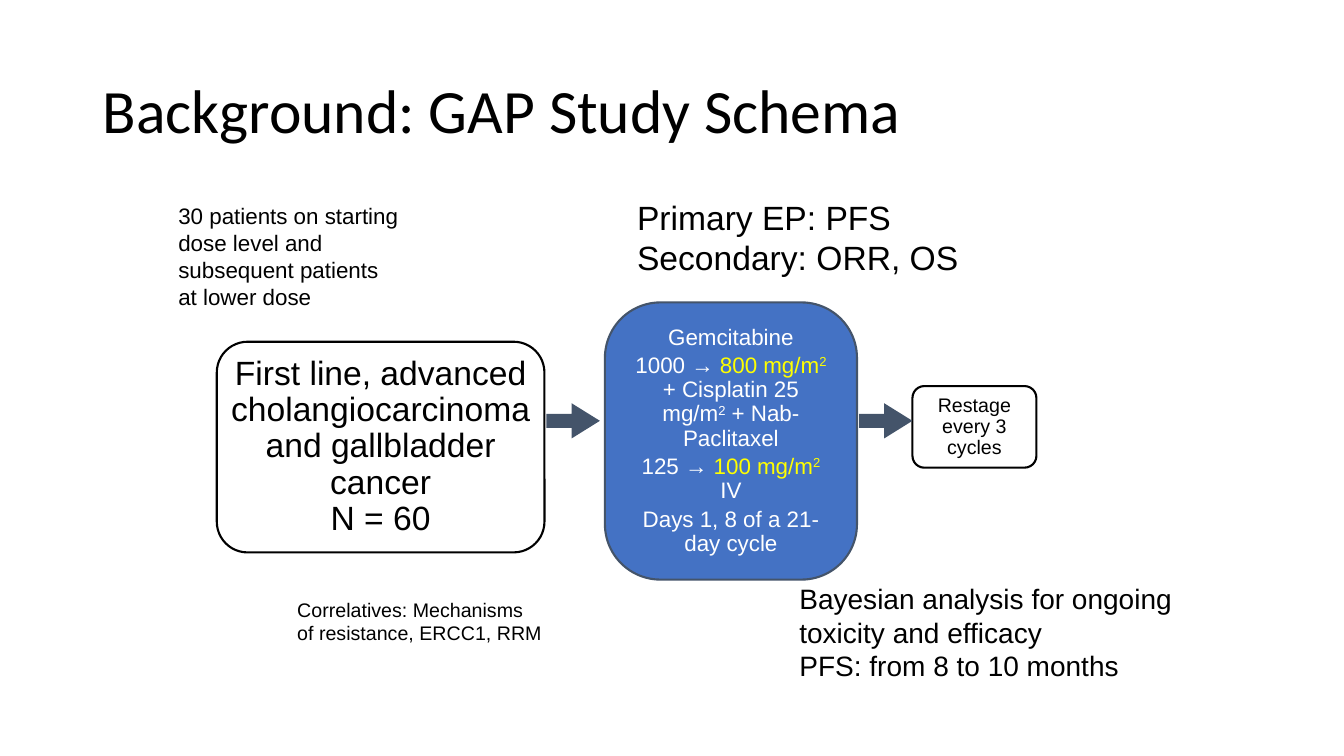
import pptx
import pptx.dml.color
import pptx.enum.shapes
import pptx.enum.text
import pptx.oxml.ns
import pptx.util
import lxml.etree

Inches = pptx.util.Inches
Pt = pptx.util.Pt
RGBColor = pptx.dml.color.RGBColor
Shape = pptx.enum.shapes.MSO_SHAPE
Align = pptx.enum.text.PP_ALIGN
Anchor = pptx.enum.text.MSO_ANCHOR

BLACK = RGBColor(0x00, 0x00, 0x00)
WHITE = RGBColor(0xFF, 0xFF, 0xFF)
YELLOW = RGBColor(0xFF, 0xFF, 0x00)
BLUE = RGBColor(0x44, 0x72, 0xC4)
SLATE = RGBColor(0x44, 0x54, 0x6A)

BREAK = "\n"


def write_text(frame, paragraphs, size, color=BLACK, font="Arial", align=Align.LEFT,
               spacing=1.0, before=0):
    """Each paragraph is a string or a list of (text, color, raised) spans; BREAK ends a line."""
    for index, content in enumerate(paragraphs):
        para = frame.add_paragraph() if index else frame.paragraphs[0]
        para.alignment = align
        para.line_spacing = spacing
        if index and before:
            para.space_before = Pt(before)
        spans = [(content, color, False)] if isinstance(content, str) else content
        for text, span_color, raised in spans:
            if text == BREAK:
                para.add_line_break()
                lxml.etree.SubElement(para._p[-1], pptx.oxml.ns.qn("a:rPr"), sz=str(size * 100))
                continue
            span = para.add_run()
            span.text = text
            span.font.size = Pt(size)
            span.font.name = font
            span.font.color.rgb = span_color
            if raised:
                span.font._element.set("baseline", "30000")


class SchemaPage:
    """Holds the slide and the style of the study schema."""

    outline_width = Pt(1.5)

    def __init__(self, deck):
        self.page = deck.slides.add_slide(deck.slide_layouts[6])

    def shape(self, kind, left, top, width, height, adjustments, fill, line=None):
        item = self.page.shapes.add_shape(
            kind, Inches(left), Inches(top), Inches(width), Inches(height))
        item.shadow.inherit = False
        for index, value in enumerate(adjustments):
            item.adjustments[index] = value
        item.fill.solid()
        item.fill.fore_color.rgb = fill
        if line is None:
            item.line.fill.background()
        else:
            item.line.color.rgb = line
            item.line.width = self.outline_width
        return item

    def step(self, left, top, width, height, paragraphs, size, fill=WHITE, line=BLACK,
             color=BLACK, corner=0.146, margins=(0, 0.05), before=0):
        item = self.shape(Shape.ROUNDED_RECTANGLE, left, top, width, height,
                          [corner], fill, line)
        frame = item.text_frame
        frame.word_wrap = True
        frame.vertical_anchor = Anchor.MIDDLE
        frame.margin_left = frame.margin_right = Inches(margins[0])
        frame.margin_top = frame.margin_bottom = Inches(margins[1])
        write_text(frame, paragraphs, size, color, align=Align.CENTER,
                   spacing=0.9, before=before)

    def arrow(self, left):
        self.shape(Shape.RIGHT_ARROW, left, 4, 0.53, 0.35, [0.398, 0.803], SLATE)

    def note(self, left, top, width, height, paragraphs, size, wrap=True,
             anchor=Anchor.TOP, **text_format):
        box = self.page.shapes.add_textbox(
            Inches(left), Inches(top), Inches(width), Inches(height))
        box.text_frame.word_wrap = wrap
        box.text_frame.vertical_anchor = anchor
        write_text(box.text_frame, paragraphs, size, **text_format)


def main():
    deck = pptx.Presentation()
    deck.slide_width = Inches(13.33)
    deck.slide_height = Inches(7.5)
    schema = SchemaPage(deck)

    # Title
    schema.note(0.92, 0.4, 11.5, 1.45, ["Background: GAP Study Schema"], 44,
                anchor=Anchor.MIDDLE, font="Calibri", spacing=0.9)

    # Flow: patients, treatment, restaging
    schema.step(2.15, 3.39, 3.25, 2.09, [
        "First line, advanced cholangiocarcinoma and gallbladder cancer",
        "N = 60",
    ], 24)
    schema.step(6, 3, 2.5, 2.75, [
        "Gemcitabine",
        [("1000 → ", WHITE, False), ("800 mg/m", YELLOW, False), ("2", YELLOW, True),
         (BREAK, WHITE, False),
         ("+ Cisplatin 25 mg/m", WHITE, False), ("2", WHITE, True),
         (" + Nab-Paclitaxel", WHITE, False)],
        [("125 → ", WHITE, False), ("100 mg/m", YELLOW, False), ("2 ", YELLOW, True),
         ("IV", WHITE, False)],
        "Days 1, 8 of a 21-day cycle",
    ], 16, fill=BLUE, line=SLATE, color=WHITE, corner=0.22, margins=(0.1, 0.1), before=3)
    schema.step(9.05, 3.83, 1.23, 0.81, ["Restage every 3 cycles"], 14)
    for left in (5.42, 8.52):
        schema.arrow(left)

    # Notes around the flow
    schema.note(1.67, 1.96, 2.42, 1.18, [
        "30 patients on starting dose level and subsequent patients at lower dose"], 16)
    schema.note(6.22, 1.9, 3.42, 0.91, ["Primary EP: PFS", "Secondary: ORR, OS"], 24,
                wrap=False)
    schema.note(2.85, 5.88, 2.83, 0.57, [
        "Correlatives: Mechanisms", "of resistance, ERCC1, RRM"], 14)
    schema.note(7.83, 5.72, 3.93, 1.11, [
        "Bayesian analysis for ongoing", "toxicity and efficacy",
        "PFS: from 8 to 10 months"], 20, wrap=False)

    deck.save("out.pptx")


if __name__ == "__main__":
    main()
